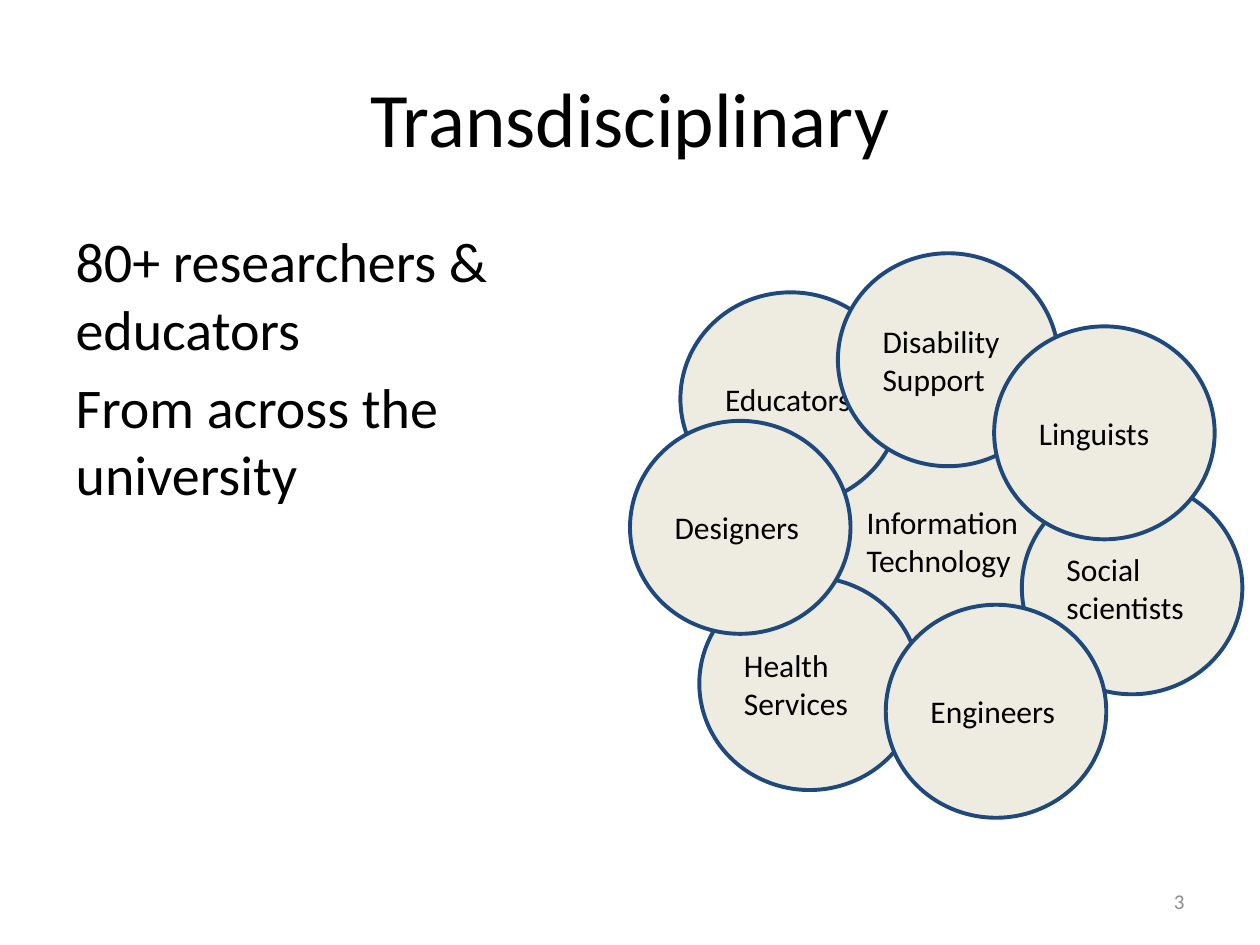
from pptx import Presentation
from pptx.dml.color import RGBColor
from pptx.enum.shapes import MSO_SHAPE
from pptx.enum.text import MSO_ANCHOR, MSO_AUTO_SIZE, PP_ALIGN
from pptx.oxml.ns import qn
from pptx.util import Inches, Pt

HUES = {"ink": "000000", "gray": "8C8C8C", "sand": "EEECE1", "navy": "1F497D"}

deck = Presentation()
deck.slide_width, deck.slide_height = Inches(10), Inches(7.5)
col, row = deck.slide_width / 100, deck.slide_height / 75


def grid(left, top, wide, high):
    return int(left * col), int(top * row), int(wide * col), int(high * row)


def write(para, text, size, hue="ink"):
    run = para.add_run()
    run.text = text
    run.font.name = "Calibri"
    run.font.size = Pt(size)
    run.font.color.rgb = RGBColor.from_string(HUES[hue])


slide = deck.slides.add_slide(deck.slide_layouts[1])
title, body = slide.placeholders
title.left, title.top, title.width, title.height = grid(5, 3, 90, 12.5)
frame = title.text_frame
frame.vertical_anchor = MSO_ANCHOR.MIDDLE
frame.paragraphs[0].alignment = PP_ALIGN.CENTER
write(frame.paragraphs[0], "Transdisciplinary", 44)

body.left, body.top, body.width, body.height = grid(5, 17.5, 40.9, 49.5)
frame = body.text_frame
frame.auto_size = MSO_AUTO_SIZE.NONE
for i, text in enumerate(["80+ researchers & educators", "From across the university"]):
    para = frame.add_paragraph() if i else frame.paragraphs[0]
    props = para._p.get_or_add_pPr()
    props.set("marL", "0")
    props.set("indent", "0")
    props.append(props.makeelement(qn("a:buNone"), {}))
    para.space_before = Pt(6.4 if i else 0)
    write(para, text, 32)

page = slide.shapes.add_textbox(*grid(71.7, 69.5, 23.3, 4))
frame = page.text_frame
frame.word_wrap = True
frame.vertical_anchor = MSO_ANCHOR.MIDDLE
frame.paragraphs[0].alignment = PP_ALIGN.RIGHT
write(frame.paragraphs[0], "3", 12, "gray")

wide, high = 17.5, 16.9
fields = [
    ("Information Technology", 64.7, 34.5, 21.1),
    ("Educators", 54, 23.2, wide),
    ("Social scientists", 81.1, 38.2, wide),
    ("Health Services", 55.5, 45.8, wide),
    ("Designers", 50, 33.4, wide),
    ("Engineers", 70.3, 48, wide),
    ("Disability Support", 66.5, 20.1, wide),
    ("Linguists", 78.9, 25.9, wide),
]
for name, left, top, span in fields:
    disc = slide.shapes.add_shape(MSO_SHAPE.OVAL, *grid(left, top, span, high))
    disc.shadow.inherit = False
    disc.fill.solid()
    disc.fill.fore_color.rgb = RGBColor.from_string(HUES["sand"])
    disc.line.color.rgb = RGBColor.from_string(HUES["navy"])
    disc.line.width = Pt(2.25)
    frame = disc.text_frame
    frame.word_wrap = True
    frame.vertical_anchor = MSO_ANCHOR.MIDDLE
    frame.margin_left = frame.margin_right = Inches(0.1)
    frame.margin_top = frame.margin_bottom = Inches(0.1)
    frame.paragraphs[0].alignment = PP_ALIGN.LEFT
    write(frame.paragraphs[0], name, 18)

deck.save("out.pptx")
